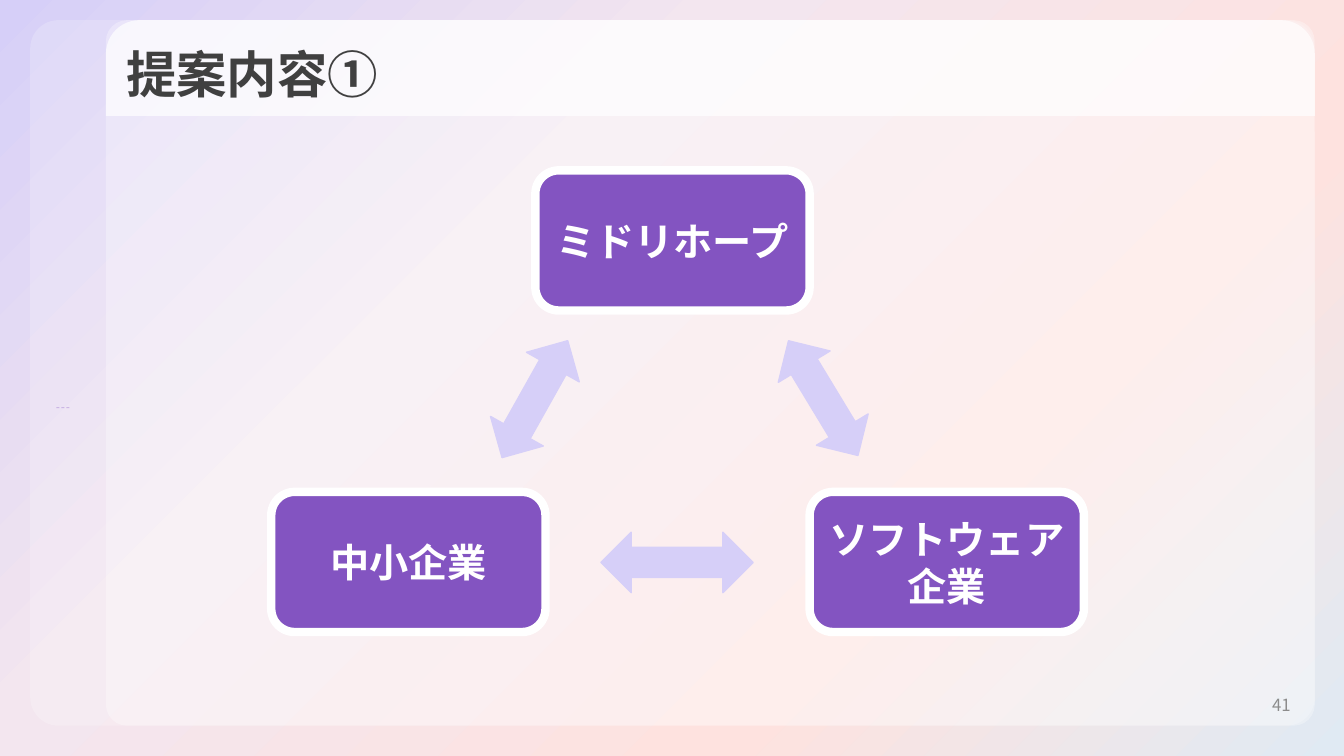
from dataclasses import dataclass

import pptx
import pptx.dml.color
import pptx.enum.shapes
import pptx.enum.text
import pptx.oxml
import pptx.oxml.ns
import pptx.util
from lxml import etree

Inches = pptx.util.Inches
Pt = pptx.util.Pt
Shape = pptx.enum.shapes.MSO_SHAPE
Align = pptx.enum.text.PP_ALIGN
Anchor = pptx.enum.text.MSO_ANCHOR
qn = pptx.oxml.ns.qn


@dataclass(frozen=True)
class Theme:
    font: str = "Noto Sans CJK JP"
    number_font: str = "Noto Sans CJK KR"
    title_size: int = 36
    node_size: int = 28
    number_size: int = 12
    white: str = "FFFFFF"
    title: str = "404040"
    number: str = "8C8C8C"
    node: str = "8354C1"
    arrow: str = "D6CFF8"
    dot: str = "AB8BD5"
    backdrop: tuple = ((0, "D6CFF8"), (35, "F3E6EF"), (70, "FEE2DF"), (100, "E0EAF3"))


THEME = Theme()

# left, top, width, height, preset, corner adjustments, opacity in percent
PANELS = [
    (0.3, 0.2, 12.74, 7, Shape.ROUNDED_RECTANGLE, (0.04,), 20),
    (1.05, 0.2, 11.99, 7, Shape.ROUNDED_RECTANGLE, (0.03,), 30),
    (1.05, 0.2, 11.99, 0.95, Shape.ROUND_2_SAME_RECTANGLE, (0.35, 0), 70),
]
NODES = [
    ("ミドリホープ", 5.31, 1.69),
    ("ソフトウェア企業", 8.03, 4.88),
    ("中小企業", 2.69, 4.88),
]
# left, top, width, rotation
ARROWS = [(5.96, 5.28, 1.51, 0), (4.64, 3.66, 1.33, 119.3), (7.5, 3.65, 1.33, 58.8)]
NODE_WIDTH, NODE_HEIGHT = 2.72, 1.39
ARROW_HEIGHT = 0.6


def rgb(color):
    return pptx.dml.color.RGBColor.from_string(color)


def paint_backdrop(slide):
    """Fill the background with a diagonal gradient of the theme's stops."""
    fill = slide.background.fill
    fill.gradient()
    fill.gradient_angle = 315
    stops = slide._element.find(".//" + qn("a:gsLst"))
    for stop in list(stops):
        stops.remove(stop)
    for percent, color in THEME.backdrop:
        stop = etree.SubElement(stops, qn("a:gs"), pos=str(percent * 1000))
        etree.SubElement(stop, qn("a:srgbClr"), val=color)


def add_block(slide, preset, left, top, width, height, color, opacity=100):
    block = slide.shapes.add_shape(
        preset, Inches(left), Inches(top), Inches(width), Inches(height))
    block.shadow.inherit = False
    block.fill.solid()
    block.fill.fore_color.rgb = rgb(color)
    block.line.fill.background()
    if opacity < 100:
        tint = block._element.spPr.find(qn("a:solidFill")).find(qn("a:srgbClr"))
        etree.SubElement(tint, qn("a:alpha"), val=str(opacity * 1000))
    return block


def outline(block, color, width):
    block.line.color.rgb = rgb(color)
    block.line.width = Pt(width)


def write(holder, text, size, color, align, bold=True, font=THEME.font):
    frame = holder.text_frame
    frame.word_wrap = True
    frame.auto_size = pptx.enum.text.MSO_AUTO_SIZE.NONE
    frame.vertical_anchor = Anchor.MIDDLE
    paragraph = frame.paragraphs[0]
    paragraph.alignment = align
    run = paragraph.add_run()
    run.text = text
    run.font.size = Pt(size)
    run.font.bold = bold
    run.font.color.rgb = rgb(color)
    run.font.name = font
    etree.SubElement(run._r.get_or_add_rPr(), qn("a:ea"), typeface=font)


def add_panels(slide):
    for left, top, width, height, preset, corners, opacity in PANELS:
        panel = add_block(slide, preset, left, top, width, height, THEME.white, opacity)
        for index, corner in enumerate(corners):
            panel.adjustments[index] = corner


def add_menu_dots(slide):
    for index in range(3):
        add_block(slide, Shape.RECTANGLE, 0.56 + 0.05 * index, 4.04, 0.03, 0.01,
                  THEME.dot, 50)


def add_title(slide, text):
    title = slide.shapes.title
    title.left, title.top = Inches(1.15), Inches(0.25)
    title.width, title.height = Inches(11.8), Inches(0.95)
    write(title, text, THEME.title_size, THEME.title, Align.LEFT)
    tree = slide.shapes._spTree
    tree.remove(title._element)
    tree.append(title._element)


def add_page_number(slide, number):
    box = slide.shapes.add_textbox(Inches(9.9), Inches(6.79), Inches(3), Inches(0.4))
    write(box, number, THEME.number_size, THEME.number, Align.RIGHT,
          bold=False, font=THEME.number_font)


def add_node(slide, label, left, top):
    node = add_block(slide, Shape.ROUNDED_RECTANGLE, left, top,
                     NODE_WIDTH, NODE_HEIGHT, THEME.node)
    outline(node, THEME.white, 6)
    write(node, label, THEME.node_size, THEME.white, Align.CENTER)


def add_exchange_arrow(slide, left, top, width, rotation):
    arrow = add_block(slide, Shape.LEFT_RIGHT_ARROW, left, top, width,
                      ARROW_HEIGHT, THEME.arrow)
    outline(arrow, THEME.arrow, 1)
    arrow.rotation = rotation


def main():
    deck = pptx.Presentation()
    deck.slide_width, deck.slide_height = Inches(13.33), Inches(7.5)
    slide = deck.slides.add_slide(deck.slide_layouts[5])
    paint_backdrop(slide)
    add_panels(slide)
    add_title(slide, "提案内容①")
    add_menu_dots(slide)
    add_page_number(slide, "41")
    for node in NODES:
        add_node(slide, *node)
    for arrow in ARROWS:
        add_exchange_arrow(slide, *arrow)
    deck.save("out.pptx")


if __name__ == "__main__":
    main()
